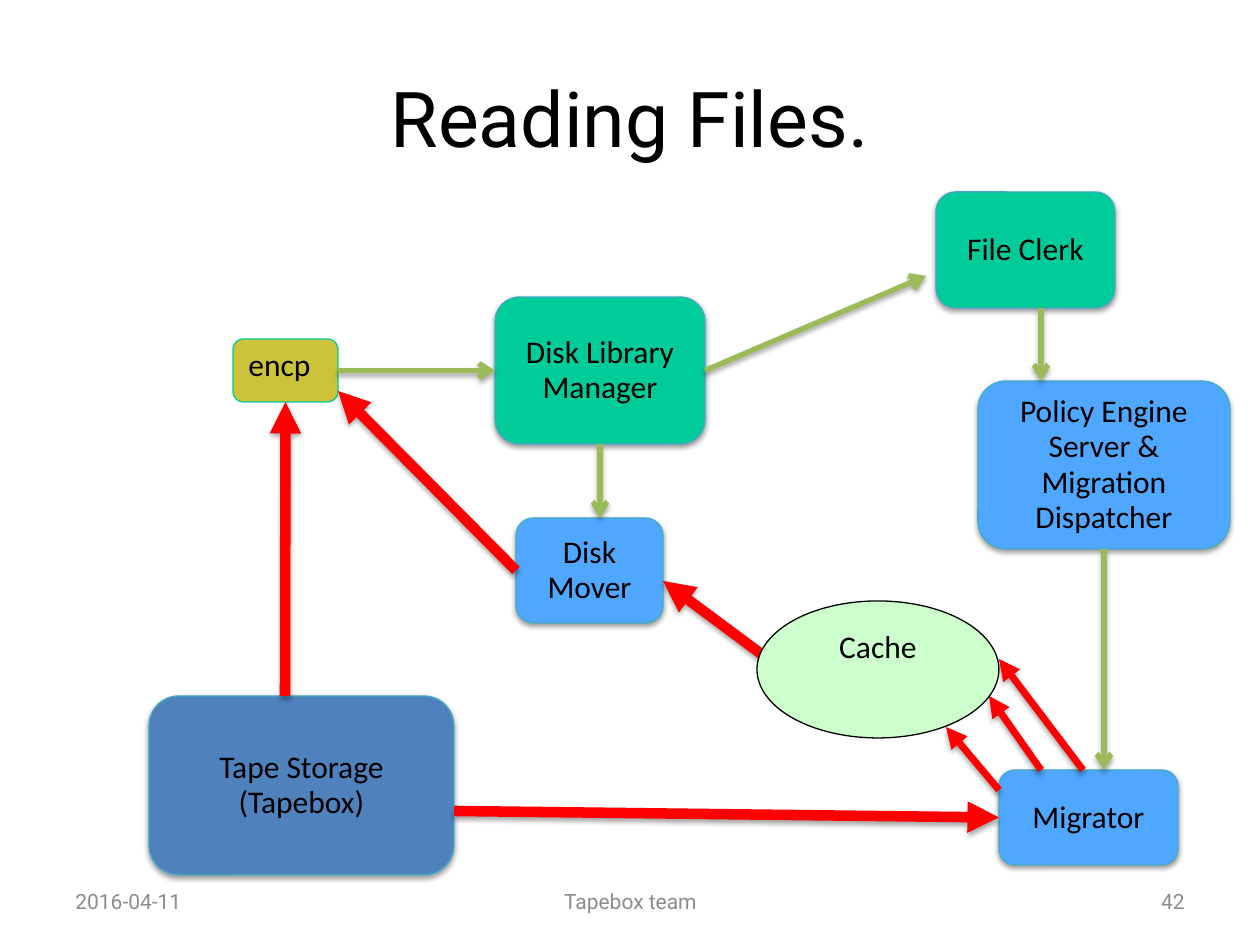
from lxml.etree import SubElement
from pptx import Presentation
from pptx.dml.color import RGBColor
from pptx.enum.shapes import MSO_CONNECTOR, MSO_SHAPE
from pptx.enum.text import MSO_ANCHOR as ANCHOR, PP_ALIGN as ALIGN
from pptx.oxml.ns import qn
from pptx.util import Pt

PX = 914400 / 126
BLACK = RGBColor(0x00, 0x00, 0x00)
GRAY = RGBColor(0x8C, 0x8C, 0x8C)
OLIVE = RGBColor(0xCC, 0xC3, 0x3A)
NAVY = RGBColor(0x4F, 0x81, 0xBD)
GREEN = RGBColor(0x00, 0xCC, 0x99)
BLUE = RGBColor(0x50, 0xA7, 0xFF)
TEAL = RGBColor(0x46, 0xAA, 0xC5)
MINT = RGBColor(0xCC, 0xFF, 0xCC)
RED = RGBColor(0xFF, 0x00, 0x00)
LIME = RGBColor(0x9B, 0xBB, 0x59)
TOP, LEFT, BOTTOM, RIGHT = range(4)


def write(shape, text, font, size, color, align, anchor, spacing=1.0):
    frame = shape.text_frame
    frame.word_wrap = True
    frame.vertical_anchor = anchor
    frame.text = text
    for para in frame.paragraphs:
        para.alignment = align
        para.line_spacing = spacing
        for span in para.runs:
            span.font.name = font
            span.font.size = Pt(size)
            span.font.color.rgb = color


def add_shadow(effects, distance, alpha):
    shadow = SubElement(effects, qn("a:outerShdw"), blurRad=str(Pt(3.1)),
                        dist=str(Pt(distance)), dir="5400000", rotWithShape="0")
    tint = SubElement(shadow, qn("a:srgbClr"), val=str(BLACK))
    SubElement(tint, qn("a:alpha"), val=str(alpha * 1000))


deck = Presentation()
deck.slide_width = int(1260 * PX)
deck.slide_height = int(945 * PX)
page = deck.slides.add_slide(deck.slide_layouts[6])

labels = [
    ("Reading Files.", (63, 38, 1134, 157), 44, BLACK, ALIGN.CENTER),
    ("2016-04-11", (63, 876, 294, 50), 12, GRAY, ALIGN.LEFT),
    ("Tapebox team", (431, 876, 399, 50), 12, GRAY, ALIGN.CENTER),
    ("42", (903, 876, 294, 50), 12, GRAY, ALIGN.RIGHT),
]
for text, place, size, color, align in labels:
    box = page.shapes.add_textbox(*[int(n * PX) for n in place])
    write(box, text, "Roboto", size, color, align, ANCHOR.MIDDLE)

nodes = [
    ("encp", "encp", (233, 339, 105, 63), OLIVE),
    ("tape", "Tape Storage\n(Tapebox)", (149, 696, 305, 179), NAVY),
    ("library", "Disk Library Manager", (495, 297, 210, 147), GREEN),
    ("clerk", "File Clerk", (936, 192, 179, 116), GREEN),
    ("mover", "Disk Mover", (516, 518, 147, 105), BLUE),
    ("policy", "Policy Engine Server & Migration Dispatcher", (978, 381, 252, 168), BLUE),
    ("migrator", "Migrator", (999, 770, 179, 95), BLUE),
]
boxes = {}
for name, text, place, color in nodes:
    box = page.shapes.add_shape(MSO_SHAPE.ROUNDED_RECTANGLE, *[int(n * PX) for n in place])
    box.fill.solid()
    box.fill.fore_color.rgb = color
    box.line.width = Pt(0.75)
    box.shadow.inherit = False
    if name == "encp":
        box.line.color.rgb = GREEN
        write(box, text, "Calibri", 18, BLACK, ALIGN.LEFT, ANCHOR.TOP, 0.93)
    else:
        box.line.color.rgb = TEAL
        add_shadow(box._element.spPr.find(qn("a:effectLst")), 1.6, 38)
        write(box, text, "Calibri", 18, BLACK, ALIGN.CENTER, ANCHOR.MIDDLE, 0.93)
    boxes[name] = box

arrows = [
    ((285, 696), (285, 402), RED, 6, None, ("encp", BOTTOM)),
    ((338, 370), (495, 370), LIME, 3, ("encp", RIGHT), ("library", LEFT)),
    ((600, 444), (600, 518), LIME, 3, ("library", BOTTOM), None),
    ((516, 570), (338, 391), RED, 6, ("mover", LEFT), None),
    ((705, 370), (926, 276), LIME, 3, ("library", RIGHT), None),
    ((1041, 308), (1041, 381), LIME, 3, None, None),
    ((768, 659), (663, 581), RED, 6, None, None),
    ((1083, 770), (999, 659), RED, 4, None, None),
    ((1041, 770), (989, 696), RED, 4, None, None),
    ((999, 790), (946, 727), RED, 4, None, None),
    ((454, 811), (999, 817), RED, 6, None, ("migrator", LEFT)),
    ((1104, 549), (1104, 770), LIME, 3, ("policy", BOTTOM), None),
]
for start, end, color, width, source, target in arrows:
    arrow = page.shapes.add_connector(MSO_CONNECTOR.STRAIGHT, *[int(n * PX) for n in start + end])
    if source:
        arrow.begin_connect(boxes[source[0]], source[1])
    if target:
        arrow.end_connect(boxes[target[0]], target[1])
    arrow.line.color.rgb = color
    arrow.line.width = Pt(width)
    tip = "triangle" if color == RED else "arrow"
    SubElement(arrow.line._get_or_add_ln(), qn("a:tailEnd"), type=tip)
    add_shadow(SubElement(arrow._element.spPr, qn("a:effectLst")), 1.8, 35)

cache = page.shapes.add_shape(MSO_SHAPE.OVAL, *[int(n * PX) for n in (757, 601, 242, 137)])
cache.shadow.inherit = False
cache.fill.solid()
cache.fill.fore_color.rgb = MINT
cache.line.color.rgb = BLACK
cache.line.width = Pt(0.75)
write(cache, "Cache", "Calibri", 18, BLACK, ALIGN.CENTER, ANCHOR.TOP)

deck.save("out.pptx")
